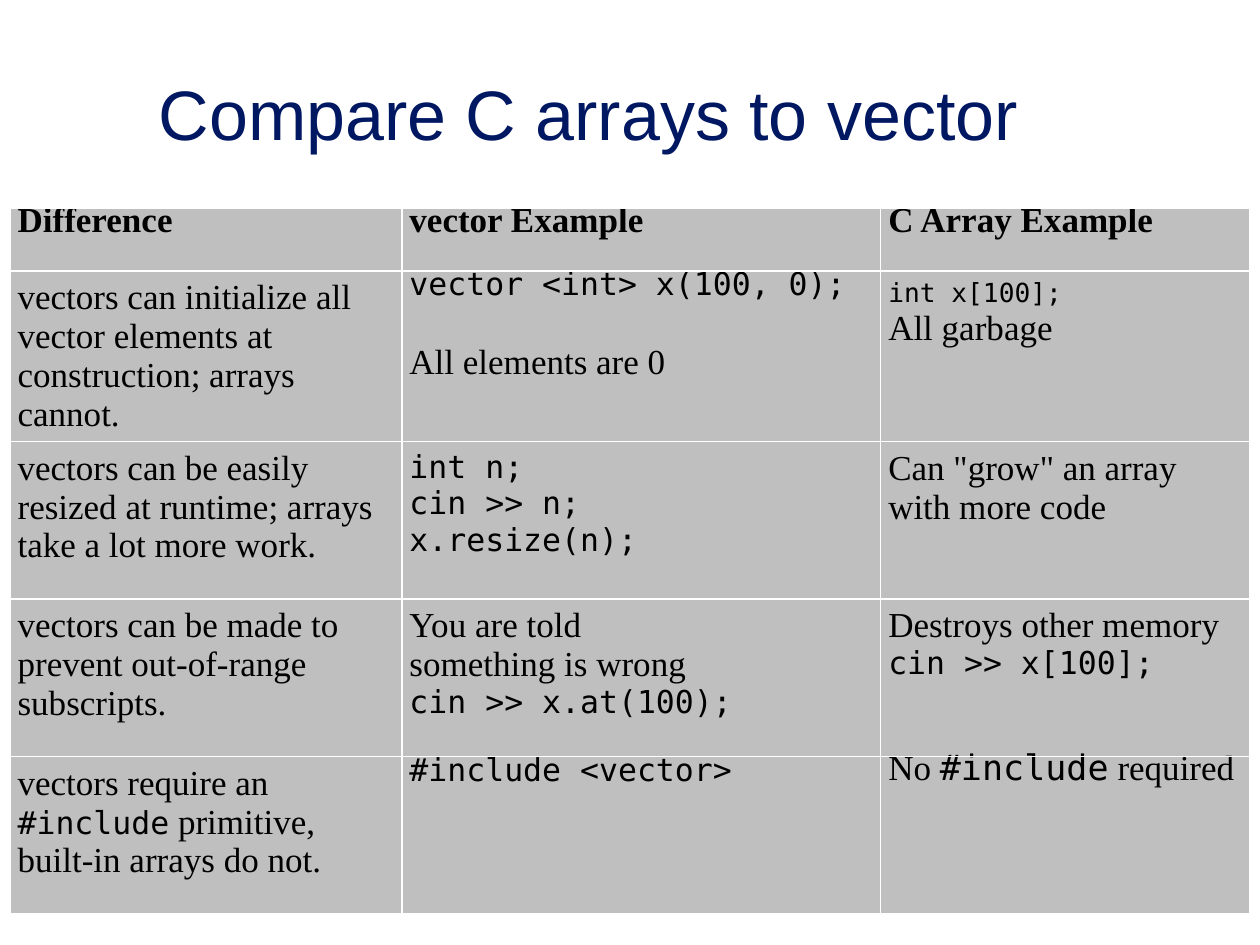
from dataclasses import dataclass

from lxml.etree import SubElement as Sub
from pptx import Presentation
from pptx.dml.color import RGBColor as Rgb
from pptx.enum.text import MSO_ANCHOR as Anchor, PP_ALIGN as Align
from pptx.oxml.ns import qn
from pptx.util import Inches, Pt

SERIF, MONO = "Times New Roman", "DejaVu Sans Mono"
WIDTHS = (3.11, 3.8, 2.93)
HEIGHTS = (0.5, 1.35, 1.25, 1.25, 1.25)


@dataclass
class Para:
    """A paragraph: its runs, exact line pitch and space before, in points."""
    runs: list
    pitch: float = 0
    gap: float = 0


def text(words, size=20, bold=False):
    """Describe a run of prose."""
    return words, SERIF, size, bold


def code(words, size=18):
    """Describe a run of code."""
    return words, MONO, size, False


def prose(words, **rest):
    """Make a paragraph of prose."""
    return Para([text(words)], **rest)


def lines(*rows):
    """Make one paragraph of code for each row."""
    return [Para([code(row)]) for row in rows]


def head(words):
    """Make the content of a header cell."""
    return [Para([text(words, bold=True)], pitch=14, gap=12)]


ROWS = [
    [head("Difference"), head("vector Example"), head("C Array Example")],
    [
        [prose("vectors can initialize all vector elements at construction; arrays cannot.")],
        [Para([code("vector <int> x(100, 0);")], pitch=14),
         prose("All elements are 0", gap=23)],
        [Para([code("int x[100];", 15)]), prose("All garbage")],
    ],
    [
        [prose("vectors can be easily resized at runtime; arrays take a lot more work.")],
        lines("int n;", "cin >> n;", "x.resize(n);"),
        [prose('Can "grow" an array'), prose("with more code")],
    ],
    [
        [prose("vectors can be made to prevent out-of-range subscripts.")],
        [prose("You are told"), prose("something is wrong"), *lines("cin >> x.at(100);")],
        [prose("Destroys other memory"), *lines("cin >> x[100];")],
    ],
    [
        [Para([text("vectors require an "), code("#include"),
               text(" primitive, built-in arrays do not.")])],
        [Para([code("#include <vector>")], pitch=14)],
        [Para([text("No "), code("#include", 20), text(" required")], pitch=14)],
    ],
]


def color(value):
    """Turn a hex string into a colour."""
    return Rgb.from_string(value)


def style(run, face, size, tint, bold=False):
    """Format a run."""
    font = run.font
    font.name, font.size, font.bold = face, Pt(size), bold
    font.color.rgb = color(tint)


def border(cell, tint, width):
    """Draw the four edges of a cell."""
    props = cell._tc.get_or_add_tcPr()
    for side in "LRTB":
        edge = Sub(props, qn(f"a:ln{side}"), w=str(Pt(width)))
        Sub(Sub(edge, qn("a:solidFill")), qn("a:srgbClr"), val=tint)


def fill(cell, paras):
    """Give a cell its look and its paragraphs."""
    border(cell, "FFFFFF", 1)
    cell.fill.solid()
    cell.fill.fore_color.rgb = color("BFBFBF")
    cell.margin_left = cell.margin_right = Inches(0.06)
    cell.margin_top = cell.margin_bottom = Inches(0.06)
    frame = cell.text_frame
    for i, para in enumerate(paras):
        line = frame.add_paragraph() if i else frame.paragraphs[0]
        line.space_before = Pt(para.gap)
        if para.pitch:
            line.line_spacing = Pt(para.pitch)
        for words, face, size, bold in para.runs:
            run = line.add_run()
            run.text = words
            style(run, face, size, "000000", bold)


def title(slide, words, *box):
    """Place the title in its box."""
    shape = slide.shapes.title
    shape.left, shape.top, shape.width, shape.height = map(Inches, box)
    frame = shape.text_frame
    frame.text = words
    frame.word_wrap = True
    frame.vertical_anchor = Anchor.MIDDLE
    line = frame.paragraphs[0]
    line.alignment, line.line_spacing = Align.CENTER, 0.87
    style(line.runs[0], "Arial", 40, "001762")


def grid(slide, left, top):
    """Place the comparison table from its top left corner."""
    box = map(Inches, (left, top, sum(WIDTHS), sum(HEIGHTS)))
    table = slide.shapes.add_table(len(HEIGHTS), len(WIDTHS), *box).table
    table.first_row = table.horz_banding = False
    for col, width in zip(table.columns, WIDTHS):
        col.width = Inches(width)
    for row, height, cells in zip(table.rows, HEIGHTS, ROWS):
        row.height = Inches(height)
        for cell, paras in zip(row.cells, cells):
            fill(cell, paras)


def main():
    """Build and save the slide."""
    deck = Presentation()
    deck.slide_width, deck.slide_height = Inches(10), Inches(7.5)
    slide = deck.slides.add_slide(deck.slide_layouts[5])
    title(slide, "Compare C arrays to vector", 0.17, 0.21, 9, 1.46)
    grid(slide, 0.08, 1.65)
    deck.save("out.pptx")


if __name__ == "__main__":
    main()
